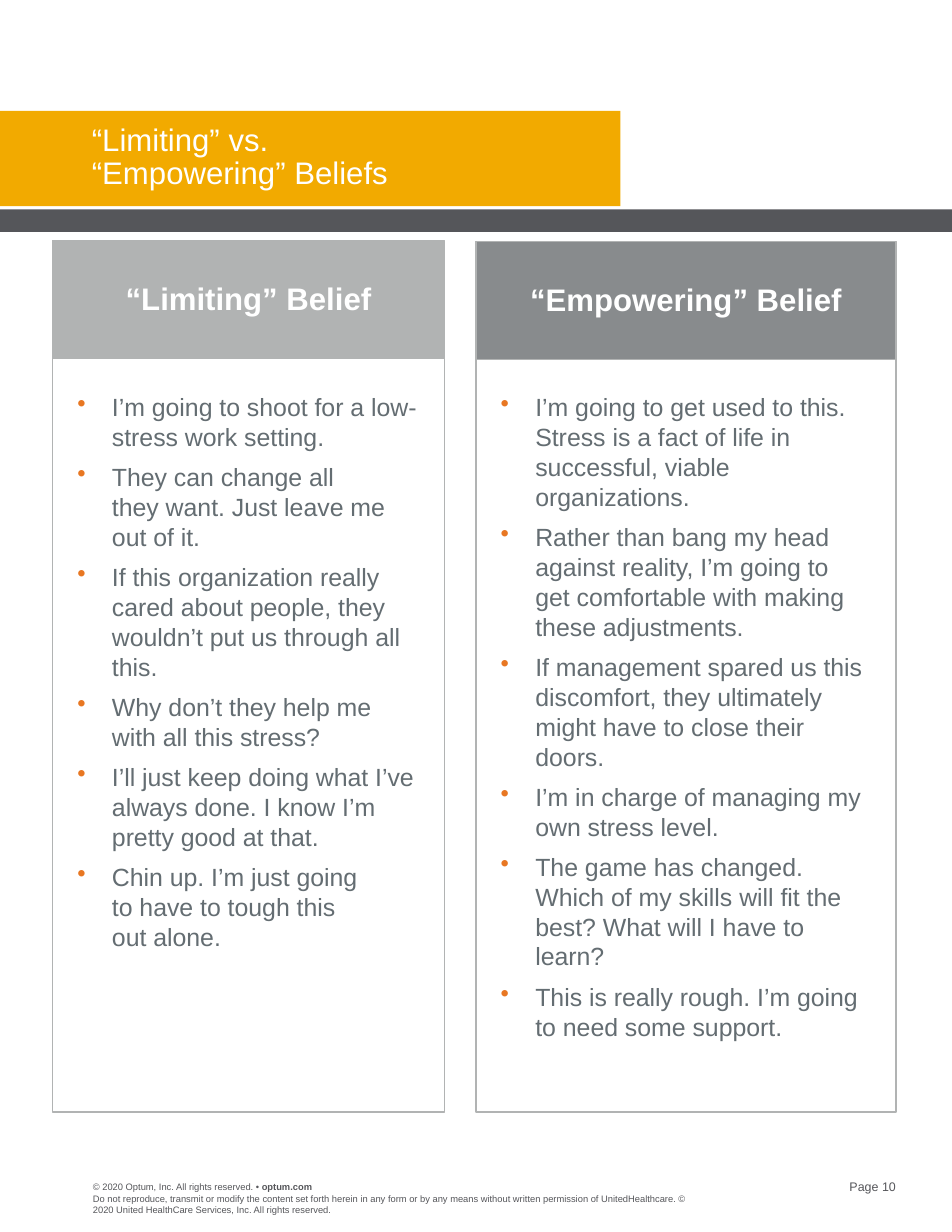
from dataclasses import dataclass

from lxml.etree import SubElement
from pptx import Presentation
from pptx.dml.color import RGBColor
from pptx.enum.shapes import MSO_SHAPE as Shape
from pptx.enum.text import MSO_ANCHOR as Anchor, PP_ALIGN as Align
from pptx.oxml.ns import qn
from pptx.util import Inches, Pt


@dataclass(frozen=True)
class Theme:
    font: str = "Arial"
    white: str = "FFFFFF"
    gold: str = "F2AA00"
    charcoal: str = "55565A"
    light_gray: str = "B1B3B3"
    mid_gray: str = "888B8D"
    body: str = "646D72"
    bullet: str = "E87722"
    heading_size: int = 20
    body_size: int = 16
    page_size: int = 8
    legal_size: int = 6


LIMITING = [
    "I’m going to shoot for a low-stress work setting.",
    "They can change all \nthey want. Just leave me out of it.",
    "If this organization really cared about people, they wouldn’t put us through all this.",
    "Why don’t they help me with all this stress?",
    "I’ll just keep doing what I’ve always done. I know I’m pretty good at that.",
    "Chin up. I’m just going \nto have to tough this \nout alone.",
]
EMPOWERING = [
    "I’m going to get used to this. Stress is a fact of life in successful, viable organizations.",
    "Rather than bang my head against reality, I’m going to \n"
    "get comfortable with making these adjustments.",
    "If management spared us this discomfort, they ultimately might have to close their doors.",
    "I’m in charge of managing my own stress level.",
    "The game has changed. Which of my skills will fit the best? What will I have to learn?",
    "This is really rough. I’m going to need some support.",
]
LEGAL = (
    "Do not reproduce, transmit or modify the content set forth herein in any form or by any "
    "means without written permission of UnitedHealthcare. © 2020 United HealthCare Services, "
    "Inc. All rights reserved."
)


class PageBuilder:
    def __init__(self, page, theme):
        self.page = page
        self.theme = theme

    def format_runs(self, para, size, color, bold=False):
        for span in para.runs:
            span.font.name = self.theme.font
            span.font.size = Pt(size)
            span.font.bold = bold
            span.font.color.rgb = RGBColor.from_string(color)

    def set_frame(self, frame, margins=(0, 0, 0, 0), anchor=Anchor.TOP):
        frame.word_wrap = True
        frame.vertical_anchor = anchor
        frame.margin_left, frame.margin_top, frame.margin_right, frame.margin_bottom = map(
            Inches, margins
        )

    def rectangle(self, place, fill=None, line=None, line_width=1):
        box = self.page.shapes.add_shape(Shape.RECTANGLE, *map(Inches, place))
        box.shadow.inherit = False
        if fill:
            box.fill.solid()
            box.fill.fore_color.rgb = RGBColor.from_string(fill)
        else:
            box.fill.background()
        if line:
            box.line.color.rgb = RGBColor.from_string(line)
            box.line.width = Pt(line_width)
        else:
            box.line.fill.background()
        return box

    def title(self, text, place):
        box = self.page.shapes.title
        self.page.shapes._spTree.append(box._element)
        box.left, box.top, box.width, box.height = map(Inches, place)
        self.set_frame(box.text_frame)
        para = box.text_frame.paragraphs[0]
        para.text = text
        para.alignment = Align.LEFT
        para.line_spacing = 0.9
        self.format_runs(para, self.theme.heading_size, self.theme.white)

    def label(self, text, place, size, align=Align.LEFT, bold_tail=""):
        box = self.page.shapes.add_textbox(*map(Inches, place))
        self.set_frame(box.text_frame)
        para = box.text_frame.paragraphs[0]
        para.text = text
        para.alignment = align
        if bold_tail:
            para.add_run().text = bold_tail
        self.format_runs(para, size, self.theme.charcoal)
        if bold_tail:
            para.runs[-1].font.bold = True

    def bullet(self, para, text):
        para.text = text
        para.level = 1
        para.alignment = Align.LEFT
        para.space_after = Pt(6.7)
        properties = para._p.get_or_add_pPr()
        properties.set("marL", str(Inches(0.31)))
        properties.set("indent", str(Inches(-0.31)))
        color = SubElement(properties, qn("a:buClr"))
        SubElement(color, qn("a:srgbClr"), val=self.theme.bullet)
        SubElement(properties, qn("a:buChar"), char="•")
        self.format_runs(para, self.theme.body_size, self.theme.body)

    def belief_column(self, heading, beliefs, left, width, heading_top, fill):
        gray = self.theme.light_gray
        panel = self.rectangle((left, 2.16, width, 7.77), line=gray)
        frame = panel.text_frame
        self.set_frame(frame, (0.22, 1.34, 0.22, 0))
        for index, belief in enumerate(beliefs):
            para = frame.add_paragraph() if index else frame.paragraphs[0]
            self.bullet(para, belief)
        header = self.rectangle((left, heading_top, width, 1.05), fill, gray, 0.75)
        self.set_frame(header.text_frame, (0, 0, 0, 0.03), Anchor.MIDDLE)
        header.text_frame.text = heading
        para = header.text_frame.paragraphs[0]
        para.alignment = Align.CENTER
        self.format_runs(para, self.theme.heading_size, self.theme.white, bold=True)


def main():
    theme = Theme()
    deck = Presentation()
    deck.slide_width, deck.slide_height = Inches(8.5), Inches(11)
    builder = PageBuilder(deck.slides.add_slide(deck.slide_layouts[5]), theme)

    builder.rectangle((0, 0.99, 5.54, 0.85), theme.gold)
    builder.rectangle((0, 1.87, 8.5, 0.2), theme.charcoal)
    builder.title("“Limiting” vs. \n“Empowering” Beliefs", (0.82, 1.11, 4.5, 0.61))

    builder.belief_column("“Limiting” Belief", LIMITING, 0.47, 3.5, 2.15, theme.light_gray)
    builder.belief_column("“Empowering” Belief", EMPOWERING, 4.25, 3.75, 2.16, theme.mid_gray)

    builder.label(
        "© 2020 Optum, Inc. All rights reserved. • ",
        (0.83, 10.55, 2, 0.1),
        theme.legal_size,
        bold_tail="optum.com",
    )
    builder.label(LEGAL, (0.83, 10.65, 5.3, 0.2), theme.legal_size)
    builder.label("Page 10", (7.19, 10.53, 0.81, 0.13), theme.page_size, Align.RIGHT)
    deck.save("out.pptx")


if __name__ == "__main__":
    main()
